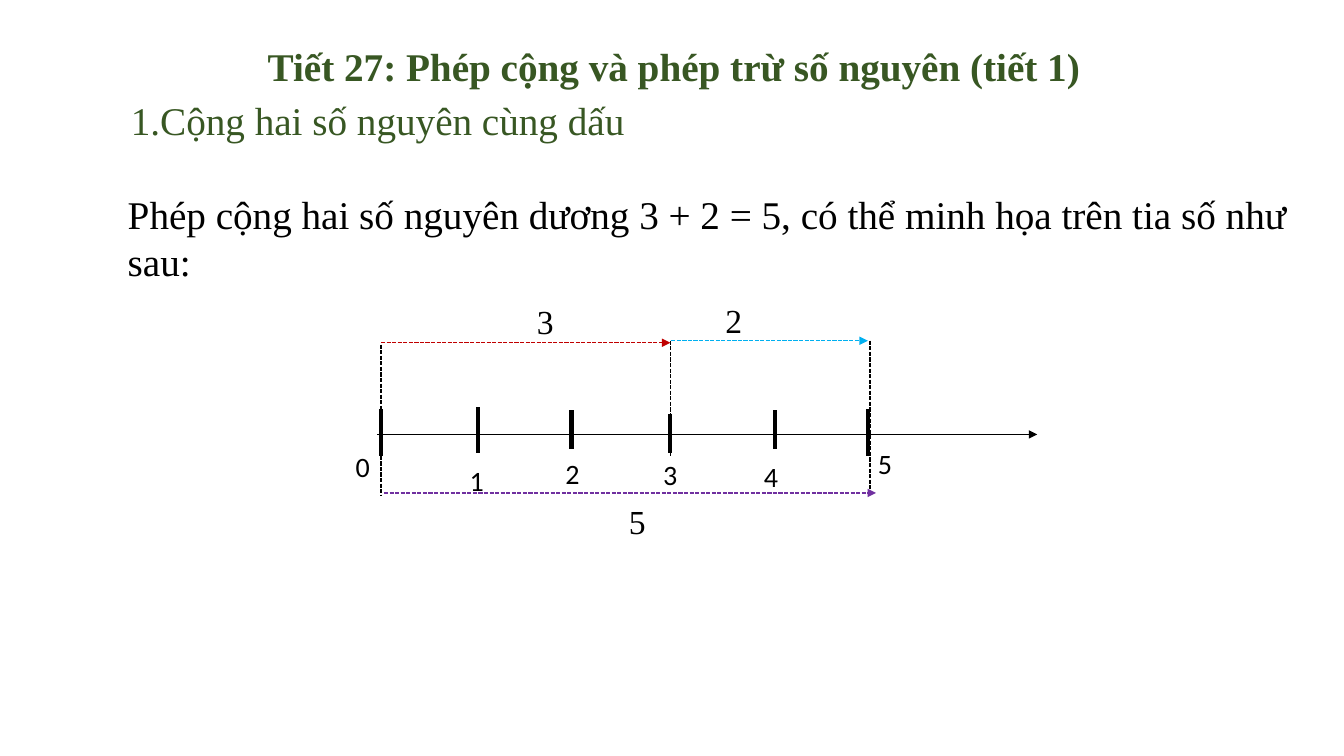
from pptx import Presentation
from pptx.dml.color import RGBColor
from pptx.enum.dml import MSO_LINE as Dash
from pptx.enum.shapes import MSO_CONNECTOR as Conn
from pptx.enum.text import PP_ALIGN as Align
from pptx.oxml.ns import qn
from pptx.util import Pt
from lxml.etree import SubElement as Sub

deck = Presentation()
deck.slide_width, deck.slide_height = Pt(960), Pt(540)
slide = deck.slides.add_slide(deck.slide_layouts[6])
shapes = slide.shapes
color = RGBColor.from_string
SERIF = "Times New Roman"


def write(text, box, size, tint="000000", face=SERIF, bold=False, **form):
    frame = shapes.add_textbox(*map(Pt, box)).text_frame
    frame.word_wrap = True
    para = frame.paragraphs[0]
    for key, value in form.items():
        setattr(para, key, value)
    run = para.add_run()
    run.text = text
    font = {"name": face, "size": Pt(size), "bold": bold}
    for key, value in font.items():
        setattr(run.font, key, value)
    run.font.color.rgb = color(tint)


def draw(ends, width=1, tint="000000", dash=None, arrow=False):
    link = shapes.add_connector(Conn.STRAIGHT, *map(Pt, ends))
    link.line.width = Pt(width)
    link.line.color.rgb = color(tint)
    if dash:
        link.line.dash_style = dash
    props = link._element.spPr
    if arrow:
        Sub(props.find(qn("a:ln")), qn("a:tailEnd"), type="triangle")
    Sub(props, qn("a:effectLst"))


write("1.Cộng hai số nguyên cùng dấu", (86.4, 65.5, 379, 41), 28, "385723")
write("Phép cộng hai số nguyên dương 3 + 2 = 5, có thể minh họa trên tia số như sau:",
      (84.2, 132.5, 847, 75), 28)
write("Tiết 27: Phép cộng và phép trừ số nguyên (tiết 1)",
      (172.8, 26.6, 617, 41), 28, "385723", bold=True, alignment=Align.CENTER)

draw((269.3, 310.3, 740.9, 310.3), arrow=True)

ticks = [
    (272.2, 292.3, 325.4, 3, 247, 305.3),
    (341.3, 290.9, 323.3, 3.25, 328.3, 315.4),
    (408.2, 293, 320.4, 3, 396.7, 310.3),
    (478.8, 295.9, 323.3, 3, 466.6, 311),
    (553.7, 293, 320.4, 3, 538.6, 312.5),
    (619.9, 292.3, 325.4, 3, 619.9, 303.1),
]
for mark, (x, top, end, width, left, high) in enumerate(ticks):
    draw((x, top, x, end), width)
    write(str(mark), (left, high, 46.8 if mark else 35.3, 98.6), 20,
          face="Calibri", line_spacing=1.5)

guides = [(272.2, 246.2, 354.2), (478.8, 243.4, 325.4), (621.4, 243.4, 351.4)]
for x, top, end in guides:
    draw((x, top, x, end), dash=Dash.SQUARE_DOT)

spans = [
    ("3", 272.2, 478.8, 244.8, "C00000", (337, 211.7, 105, 36)),
    ("2", 479.5, 619.9, 243.4, "00B0F0", (488.9, 211, 70.6, 36)),
    ("5", 274.3, 625.7, 352.1, "7030A0", (419.8, 354.2, 70.6, 36)),
]
for text, start, end, y, tint, box in spans:
    draw((start, y, end, y), 1, tint, Dash.SQUARE_DOT, True)
    write(text, box, 24, alignment=Align.CENTER)

deck.save("out.pptx")
